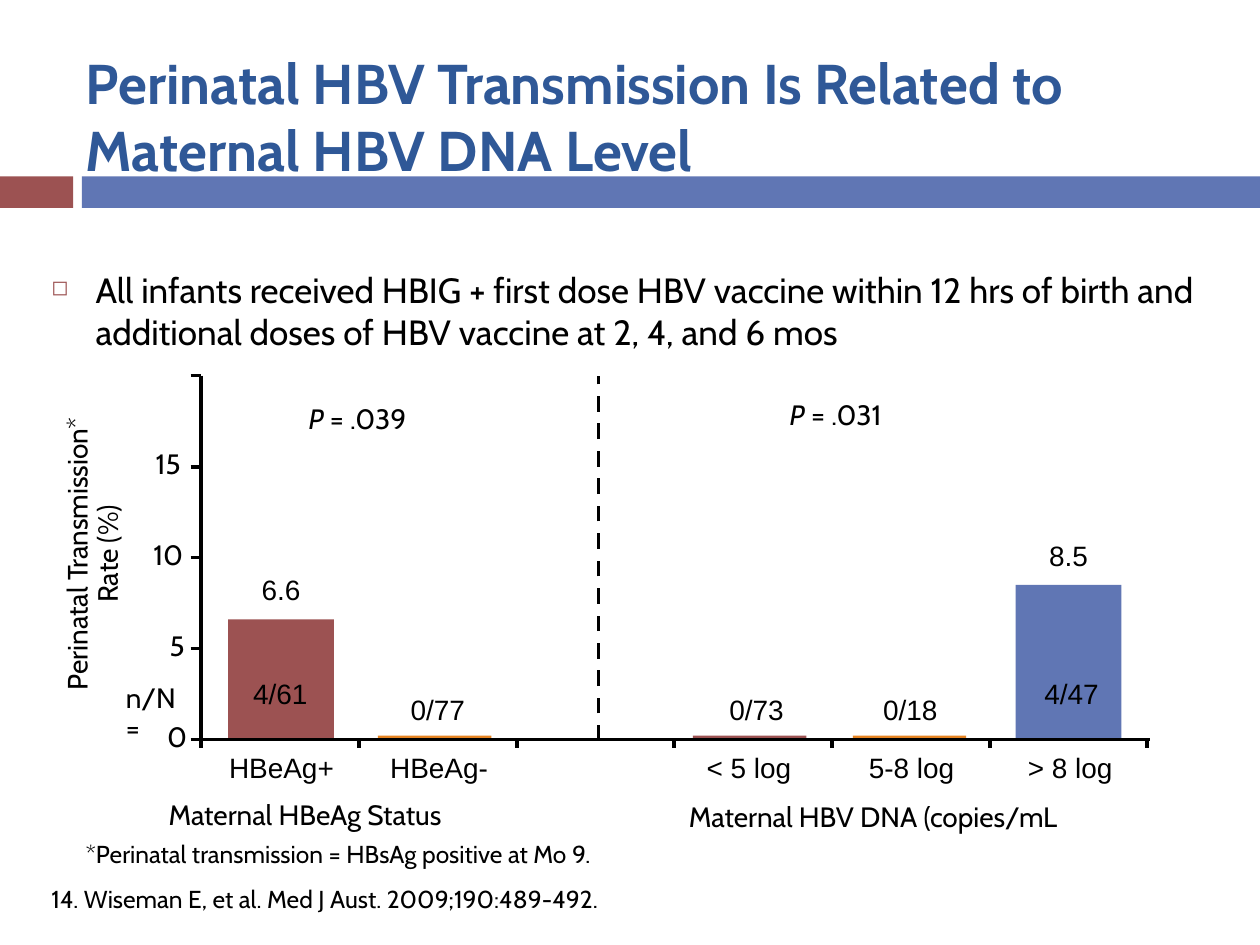
from dataclasses import dataclass

from lxml.etree import SubElement
from pptx import Presentation
from pptx.dml.color import RGBColor as Rgb
from pptx.enum.dml import MSO_LINE_DASH_STYLE as Dash
from pptx.enum.shapes import MSO_CONNECTOR as Link, MSO_SHAPE as Kind
from pptx.enum.text import MSO_ANCHOR as Anchor, PP_ALIGN as Align
from pptx.oxml.ns import qn
from pptx.util import Pt

INK = {"black": "000000", "title": "2F5897", "red": "9C5252",
       "blue": "6076B4", "gold": "E68422"}

# Chart frame: base line, points per percent, tick grid
BASE = 422.6
UNIT = 10.4
LEFT = 115
RIGHT = 657.4
STEP = 90.1
TOP = BASE - 20 * UNIT
LABEL_W, LABEL_H = 84.2, 24.5


@dataclass
class Bar:
    name: str
    ratio: str
    rate: float
    fill: str
    mid: float      # centre of the bar
    name_x: float   # centre of the category name
    ratio_x: float  # centre of the n/N label


BARS = [
    Bar("HBeAg+", "4/61", 6.6, "red", 160.6, 160.9, 160.2),
    Bar("HBeAg-", "0/77", 0, "gold", 248.4, 250.9, 250.2),
    Bar("< 5 log", "0/73", 0, "red", 428.4, 428, 432.4),
    Bar("5-8 log", "0/18", 0, "gold", 519.8, 520.9, 520.2),
    Bar("> 8 log", "4/47", 8.5, "blue", 610.6, 611.6, 612.4),
]

deck = Presentation()
deck.slide_width, deck.slide_height = Pt(720), Pt(540)
slide = deck.slides.add_slide(deck.slide_layouts[6])


def rect(x: float, y: float, w: float, h: float, fill: str) -> None:
    box = slide.shapes.add_shape(Kind.RECTANGLE, Pt(x), Pt(y), Pt(w), Pt(h))
    box.shadow.inherit = False
    box.fill.solid()
    box.fill.fore_color.rgb = Rgb.from_string(INK[fill])
    box.line.fill.background()


def line(x1: float, y1: float, x2: float, y2: float, dash: bool = False) -> None:
    rule = slide.shapes.add_connector(
        Link.STRAIGHT, Pt(x1), Pt(y1), Pt(x2), Pt(y2))
    rule.line.width = Pt(2.25)
    rule.line.color.rgb = Rgb.from_string(INK["black"])
    if dash:
        rule.line.dash_style = Dash.DASH
    SubElement(rule._element.spPr, qn("a:effectLst"))


def text(words: str, x: float, y: float, w: float, h: float, *,
         size: float = 16, font: str = "Cabin", ink: str = "black",
         bold: bool = False, lead: str = "", align: Align = Align.LEFT,
         anchor: Anchor = Anchor.TOP, space: float = 0.9, before: float = 0,
         wrap: bool = True, turn: float = 0, bullet: str = "") -> None:
    """Add a text box; lead is an italic start, bullet a list sign."""
    box = slide.shapes.add_textbox(Pt(x), Pt(y), Pt(w), Pt(h))
    box.rotation = turn
    frame = box.text_frame
    frame.word_wrap = wrap
    frame.vertical_anchor = anchor
    for i, part in enumerate(words.split("\n")):
        para = frame.add_paragraph() if i else frame.paragraphs[0]
        para.alignment = align
        para.line_spacing = space
        para.space_before = Pt(before)
        if bullet:
            mark(para, bullet)
        for piece, slant in ((lead, True), (part, False)):
            if not piece:
                continue
            run = para.add_run()
            run.text = piece
            run.font.name = font
            run.font.size = Pt(size)
            run.font.bold = bold
            run.font.italic = slant
            run.font.color.rgb = Rgb.from_string(INK[ink])


def mark(para, sign: str) -> None:
    """Give a paragraph a small red bullet and a hanging indent."""
    props = para._p.get_or_add_pPr()
    props.set("marL", str(Pt(25.2)))
    props.set("indent", str(-Pt(25.2)))
    tint = SubElement(props, qn("a:buClr"))
    SubElement(tint, qn("a:srgbClr"), val=INK["red"])
    SubElement(props, qn("a:buSzPct"), val="60000")
    SubElement(props, qn("a:buChar"), char=sign)


def label(words: str, mid: float, y: float) -> None:
    text(words, mid - LABEL_W / 2, y, LABEL_W, LABEL_H,
         font="Arial", align=Align.CENTER)


def draw(bar: Bar) -> None:
    wide = 60.5 if bar.rate else 64.8
    tall = max(bar.rate * UNIT, 2.2)
    peak = BASE - tall
    rect(bar.mid - wide / 2, peak, wide, tall, bar.fill)
    if bar.rate:
        label(f"{bar.rate}", bar.mid, peak - 28)
    label(bar.ratio, bar.ratio_x, 385.2 if bar.rate else 394.6)
    label(bar.name, bar.name_x, 427.7)


# Header band and title
rect(0, 100.8, 41.8, 18, "red")
rect(46.8, 100.8, 673.2, 18, "blue")
text("Perinatal HBV Transmission Is Related to Maternal HBV DNA Level",
     41.8, 30.2, 642.2, 72, size=32, ink="title", bold=True,
     anchor=Anchor.MIDDLE, space=1)

# Bullet
text("All infants received HBIG + first dose HBV vaccine within 12 hrs of "
     "birth and additional doses of HBV vaccine at 2, 4, and 6 mos",
     22.3, 149.8, 673.2, 56.2, size=20, space=1, before=7, bullet="◻")

# Bars with their labels
for bar in BARS:
    draw(bar)

# Axes, ticks and the divider between the two groups
line(342, 423.4, 342, 214.6, dash=True)
line(LEFT, TOP, LEFT, BASE)
line(LEFT, BASE, RIGHT, BASE)
for i in range(5):
    y = BASE - 5 * UNIT * i
    line(LEFT - 6, y, LEFT, y)
for i in range(7):
    x = LEFT + STEP * i
    line(x, BASE, x, BASE + 5)

# Value axis numbers and title
for num, mid in ((0, 101.2), (5, 101.2), (10, 96.1), (15, 96.1)):
    text(str(num), mid - 16.2, BASE - num * UNIT - 13, 32.4, LABEL_H,
         align=Align.CENTER, wrap=False)
text("Perinatal Transmission*\nRate (%)", -56.2, 295.2, 220.3, 42.5,
     align=Align.CENTER, turn=270)
text("n/N =", 64.8, 387.4, 53.3, LABEL_H)

# P values
text(" = .039", 169.2, 228.2, 85.7, LABEL_H, lead="P")
text(" = .031", 444.2, 226.1, 85.7, LABEL_H, lead="P")

# Group titles
text("Maternal HBeAg Status", 89.3, 452.2, 228.2, 26.6, space=1)
text("Maternal HBV DNA (copies/mL", 386.6, 453.6, 279.4, 26.6, space=1)

# Footnote and source
text("*Perinatal transmission = HBsAg positive at Mo 9.",
     41.8, 477.4, 380.9, 22.3, size=14, anchor=Anchor.BOTTOM)
text("14. Wiseman E, et al. Med J Aust. 2009;190:489-492.",
     22.3, 501.1, 679.7, LABEL_H, size=14, anchor=Anchor.BOTTOM, space=1)

deck.save("out.pptx")
